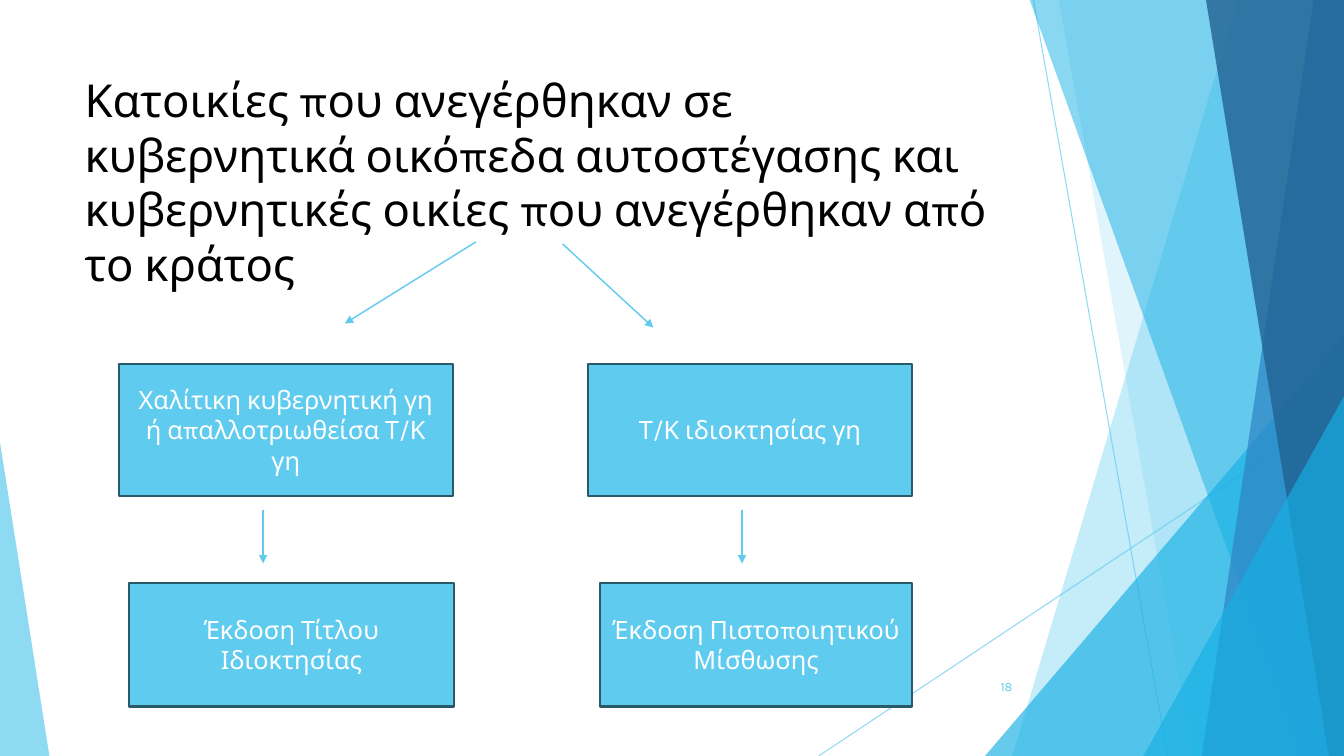
from pptx import Presentation
from pptx.dml.color import RGBColor
from pptx.enum.shapes import MSO_CONNECTOR, MSO_SHAPE
from pptx.enum.text import MSO_ANCHOR as ANCHOR, PP_ALIGN as ALIGN
from pptx.oxml.ns import qn
from pptx.util import Inches, Pt
from lxml.etree import SubElement

FONT = "Karla"
SKY, CYAN, BLUE, NAVY = "5FCBEF", "17B0E4", "2E83C3", "226292"
EDGE, WHITE, BLACK = "2A5969", "FFFFFF", "000000"


def rgb(color):
    return RGBColor.from_string(color)


def set_alpha(fill_parent, percent):
    clr = fill_parent.find(qn("a:solidFill"))[0]
    SubElement(clr, qn("a:alpha"), val=str(percent * 1000))


def paint(sp, color, alpha=100, edge=None):
    sp.shadow.inherit = False
    sp.fill.solid()
    sp.fill.fore_color.rgb = rgb(color)
    if alpha < 100:
        set_alpha(sp._element.spPr, alpha)
    if edge:
        sp.line.color.rgb = rgb(edge)
        sp.line.width = Pt(1.5)
    else:
        sp.line.fill.background()


def write(sp, text, size=18, color=WHITE, align=ALIGN.CENTER, anchor=ANCHOR.MIDDLE):
    tf = sp.text_frame
    tf.word_wrap = True
    tf.vertical_anchor = anchor
    p = tf.paragraphs[0]
    p.alignment = align
    r = p.add_run()
    r.text = text
    r.font.name = FONT
    r.font.size = Pt(size)
    r.font.color.rgb = rgb(color)


def add_text(s, box, text, **fmt):
    write(s.shapes.add_textbox(*map(Inches, box)), text, **fmt)


def add_line(s, start, end, width=1, alpha=100, arrow=False):
    c = s.shapes.add_connector(MSO_CONNECTOR.STRAIGHT, *map(Inches, (*start, *end)))
    c.line.color.rgb = rgb(SKY)
    c.line.width = Pt(width)
    ln = c.line._get_or_add_ln()
    if alpha < 100:
        set_alpha(ln, alpha)
    if arrow:
        SubElement(ln, qn("a:tailEnd"), type="triangle")
    SubElement(c._element.spPr, qn("a:effectLst"))


def add_facet(s, box, top_x, foot_x, color, alpha):
    left, top, width, height = box
    right, bottom = left + width, top + height
    fb = s.shapes.build_freeform(Inches(top_x), Inches(top), scale=1)
    corners = [(right, top), (right, bottom), (foot_x, bottom)]
    fb.add_line_segments([(Inches(x), Inches(y)) for x, y in corners], close=True)
    paint(fb.convert_to_shape(), color, alpha)


def add_wedge(s, box, peak, color, alpha):
    sp = s.shapes.add_shape(MSO_SHAPE.ISOSCELES_TRIANGLE, *map(Inches, box))
    sp.adjustments[0] = peak
    paint(sp, color, alpha)


def draw_backdrop(s, box):
    left, top, width, height = box
    right, bottom = left + width, top + height
    band = (left, top - 0.01, width, height + 0.01)

    def facet(*args):
        add_facet(s, band, *args)

    def corner_wedge(w, h):
        add_wedge(s, (right - w, bottom - h, w, h), 1, CYAN, 66)

    add_line(s, (10.25, top), (11.58, bottom), 0.75, 70)
    add_line(s, (right, 4.03), (8.12, bottom), 0.75, 70)
    facet(12.28, 10.04, SKY, 36)
    facet(10.5, 11.83, SKY, 20)
    corner_wedge(3.56, 4.17)
    facet(10.21, 12.91, CYAN, 50)
    facet(13.03, 11.92, BLUE, 70)
    facet(11.96, 13.18, NAVY, 80)
    corner_wedge(1.99, 3.57)
    add_wedge(s, (left, bottom - 3.11, 0.49, 3.11), 0, SKY, 70)


def draw_diagram(s, box):
    left, top, width, height = box
    right, bottom = left + width, top + height
    land_y, land_h, deed_h = top + 1.21, 1.31, 1.23
    deed_y = bottom - deed_h
    steps = [
        (left, land_y, 3.31, land_h, "Χαλίτικη κυβερνητική γη ή απαλλοτριωθείσα Τ/Κ γη"),
        (right - 3.22, land_y, 3.22, land_h, "Τ/Κ ιδιοκτησίας γη"),
        (left + 0.1, deed_y, 3.22, deed_h, "Έκδοση Τίτλου Ιδιοκτησίας"),
        (right - 3.1, deed_y, 3.1, deed_h, "Έκδοση Πιστοποιητικού Μίσθωσης"),
    ]
    for *place, text in steps:
        sp = s.shapes.add_shape(MSO_SHAPE.RECTANGLE, *map(Inches, place))
        paint(sp, SKY, edge=EDGE)
        write(sp, text)
    for x in (left + 1.43, left + 6.18):
        add_line(s, (x, land_y + land_h + 0.14), (x, deed_y - 0.19), arrow=True)
    add_line(s, (left + 3.54, top), (left + 2.24, top + 0.81), arrow=True)
    add_line(s, (left + 4.4, top + 0.02), (left + 5.3, top + 0.85), arrow=True)


def main():
    prs = Presentation()
    prs.slide_width, prs.slide_height = Inches(13.33), Inches(7.5)
    s = prs.slides.add_slide(prs.slide_layouts[6])
    draw_backdrop(s, (0, 0, 13.33, 7.5))
    add_text(s, (0.74, 0.67, 9.4, 1.98),
             "Κατοικίες που ανεγέρθηκαν σε κυβερνητικά οικόπεδα αυτοστέγασης και "
             "κυβερνητικές οικίες που ανεγέρθηκαν από το κράτος",
             size=32.4, color=BLACK, align=ALIGN.LEFT, anchor=ANCHOR.TOP)
    draw_diagram(s, (1.18, 2.4, 7.87, 4.61))
    add_text(s, (9.39, 6.61, 0.75, 0.4), "18", size=9, color=SKY, align=ALIGN.RIGHT)
    prs.save("out.pptx")


if __name__ == "__main__":
    main()
